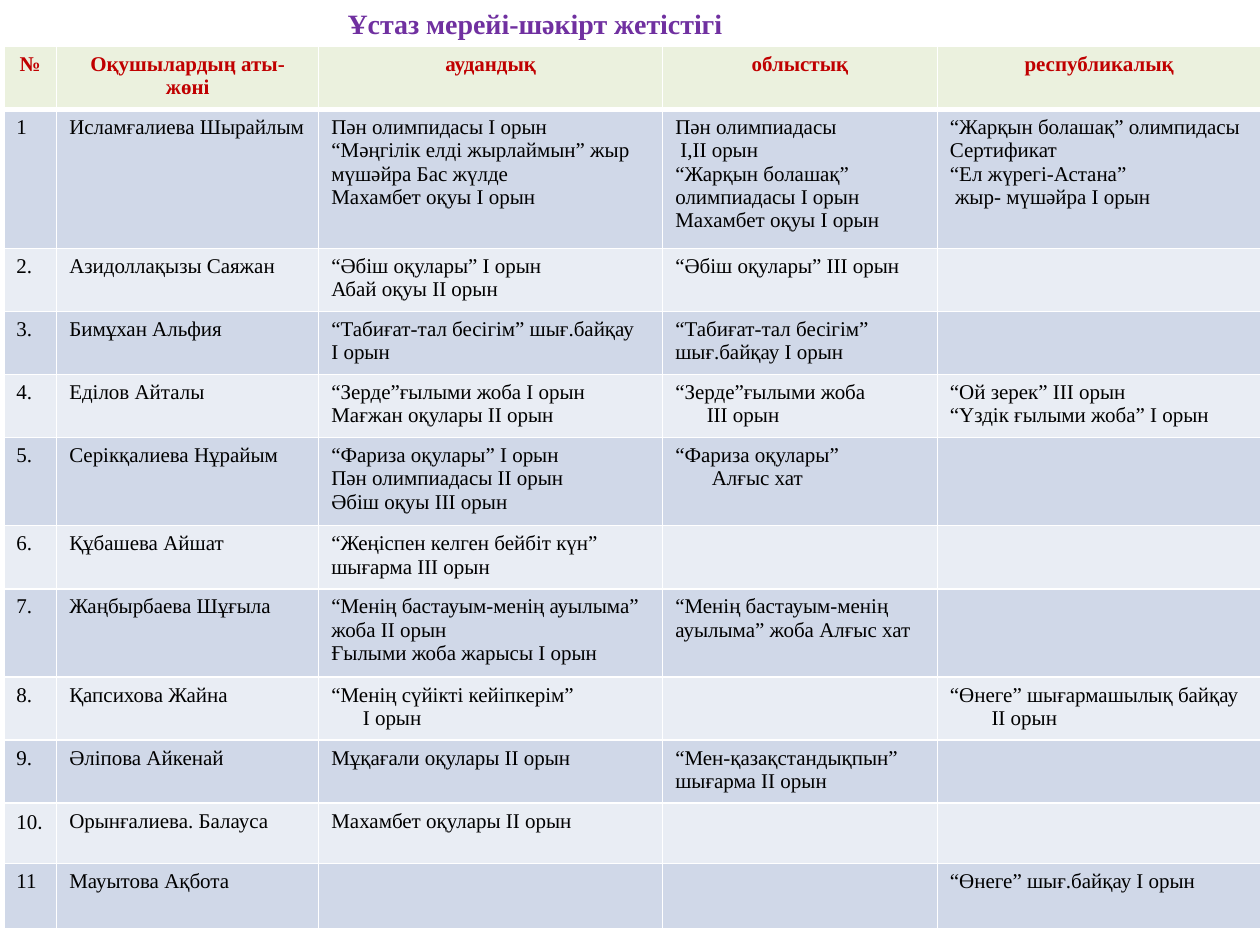
from collections import namedtuple

from lxml.etree import SubElement
from pptx import Presentation
from pptx.dml.color import RGBColor
from pptx.enum.text import MSO_AUTO_SIZE, PP_ALIGN
from pptx.oxml.ns import qn
from pptx.util import Inches, Pt

PURPLE = RGBColor(0x70, 0x30, 0xA0)
RED = RGBColor(0xC0, 0x00, 0x00)
BLACK = RGBColor(0x00, 0x00, 0x00)
WHITE = RGBColor(0xFF, 0xFF, 0xFF)
HEADER_GREEN = RGBColor(0xEB, 0xF1, 0xDE)
BAND_DARK = RGBColor(0xD0, 0xD8, 0xE8)
BAND_LIGHT = RGBColor(0xE9, 0xED, 0xF4)

Indented = namedtuple("Indented", "text inches")

COL_WIDTHS = [0.42, 2.08, 2.73, 2.18, 2.57]
ROW_HEIGHTS = [0.49, 1.1, 0.5, 0.5, 0.5, 0.7, 0.5, 0.7, 0.5, 0.5, 0.48, 0.52]

HEADERS = ["№", "Оқушылардың аты-жөні", "аудандық", "облыстық", "республикалық"]

# Each row: number, pupil, then the lines for district, region and republic
PUPILS = [
    ("1", "Исламғалиева Шырайлым",
     ["Пән олимпидасы І орын",
      "“Мәңгілік елді жырлаймын” жыр мүшәйра Бас жүлде",
      "Махамбет оқуы І орын"],
     ["Пән олимпиадасы", Indented("І,ІІ орын", 0.04), "“Жарқын болашақ”",
      "олимпиадасы І орын", "Махамбет оқуы І орын"],
     ["“Жарқын болашақ” олимпидасы Сертификат", "“Ел жүрегі-Астана”",
      Indented("жыр- мүшәйра І орын", 0.04)]),
    ("2.", "Азидоллақызы Саяжан",
     ["“Әбіш оқулары” І орын", "Абай оқуы ІІ орын"],
     ["“Әбіш оқулары” ІІІ орын"], []),
    ("3.", "Бимұхан Альфия",
     ["“Табиғат-тал бесігім” шығ.байқау", "І орын"],
     ["“Табиғат-тал бесігім” шығ.байқау І орын"], []),
    ("4.", "Еділов Айталы",
     ["“Зерде”ғылыми жоба І орын", "Мағжан оқулары ІІ орын"],
     ["“Зерде”ғылыми жоба", Indented("ІІІ орын", 0.25)],
     ["“Ой зерек” ІІІ орын", "“Үздік ғылыми жоба” І орын"]),
    ("5.", "Серікқалиева Нұрайым",
     ["“Фариза оқулары” І орын", "Пән олимпиадасы ІІ орын", "Әбіш оқуы ІІІ орын"],
     ["“Фариза оқулары”", Indented("Алғыс хат", 0.29)], []),
    ("6.", "Құбашева Айшат",
     ["“Жеңіспен келген бейбіт күн” шығарма ІІІ орын"], [], []),
    ("7.", "Жаңбырбаева Шұғыла",
     ["“Менің бастауым-менің ауылыма” жоба ІІ орын", "Ғылыми жоба жарысы І орын"],
     ["“Менің бастауым-менің ауылыма” жоба Алғыс хат"], []),
    ("8.", "Қапсихова Жайна",
     ["“Менің сүйікті кейіпкерім”", Indented("І орын", 0.25)], [],
     ["“Өнеге” шығармашылық байқау", Indented("ІІ орын", 0.33)]),
    ("9.", "Әліпова Айкенай",
     ["Мұқағали оқулары ІІ орын"],
     ["“Мен-қазақстандықпын” шығарма ІІ орын"], []),
    ("10.", "Орынғалиева. Балауса",
     ["Махамбет оқулары ІІ орын"], [], []),
    ("11", "Мауытова Ақбота", [], [], ["“Өнеге” шығ.байқау І орын"]),
]


class SlideBuilder:
    font_name = "Times New Roman"

    def __init__(self, slide):
        self.slide = slide

    def style(self, p, size, color, bold=False):
        p.font.name = self.font_name
        p.font.size = Pt(size)
        p.font.color.rgb = color
        p.font.bold = bold

    def title(self, text, left, top, width, height):
        sp = self.slide.shapes.add_textbox(
            Inches(left), Inches(top), Inches(width), Inches(height))
        tf = sp.text_frame
        tf.word_wrap = False
        tf.auto_size = MSO_AUTO_SIZE.SHAPE_TO_FIT_TEXT
        tf.text = text
        self.style(tf.paragraphs[0], 16, PURPLE, bold=True)

    def borders(self, cell, bottom_width):
        tc_pr = cell._tc.get_or_add_tcPr()
        widths = {"a:lnL": 1, "a:lnR": 1, "a:lnT": 1, "a:lnB": bottom_width}
        for index, (tag, width) in enumerate(widths.items()):
            ln = SubElement(tc_pr, qn(tag), w=str(Pt(width)))
            fill = SubElement(ln, qn("a:solidFill"))
            SubElement(fill, qn("a:srgbClr"), val=str(WHITE))
            tc_pr.insert(index, ln)

    def cell(self, cell, lines, fill, header=False):
        cell.fill.solid()
        cell.fill.fore_color.rgb = fill
        self.borders(cell, 3 if header else 1)
        tf = cell.text_frame
        for index, line in enumerate(lines or [""]):
            p = tf.add_paragraph() if index else tf.paragraphs[0]
            if isinstance(line, Indented):
                p._p.get_or_add_pPr().set("marL", str(Inches(line.inches)))
                line = line.text
            if line:
                p.add_run().text = line
            self.style(p, 12, RED if header else BLACK, bold=header)
            if header:
                p.alignment = PP_ALIGN.CENTER

    def table(self, left, top, headers, rows):
        table = self.slide.shapes.add_table(
            len(rows) + 1, len(headers), Inches(left), Inches(top),
            Inches(sum(COL_WIDTHS)), Inches(sum(ROW_HEIGHTS))).table
        table.first_row = False
        table.horz_banding = False
        for column, width in zip(table.columns, COL_WIDTHS):
            column.width = Inches(width)
        for row, height in zip(table.rows, ROW_HEIGHTS):
            row.height = Inches(height)
        for c, text in enumerate(headers):
            self.cell(table.cell(0, c), [text], HEADER_GREEN, header=True)
        for r, (number, pupil, *awards) in enumerate(rows, start=1):
            fill = BAND_DARK if r % 2 else BAND_LIGHT
            for c, lines in enumerate([[number], [pupil], *awards]):
                self.cell(table.cell(r, c), lines, fill)
        return table


def main():
    prs = Presentation()
    prs.slide_width = Inches(10)
    prs.slide_height = Inches(7.5)
    s = SlideBuilder(prs.slides.add_slide(prs.slide_layouts[6]))

    # Title
    s.title("Ұстаз мерейі-шәкірт жетістігі", 2.66, 0, 3.22, 0.37)

    # Achievements table
    table = s.table(0.03, 0.37, HEADERS, PUPILS)

    # The dot after number 10 has its own font
    p = table.cell(10, 0).text_frame.paragraphs[0]
    p.runs[0].text = "10"
    r = p.add_run()
    r.text = "."
    r.font.name = "Calibri"

    prs.save("out.pptx")


if __name__ == "__main__":
    main()
